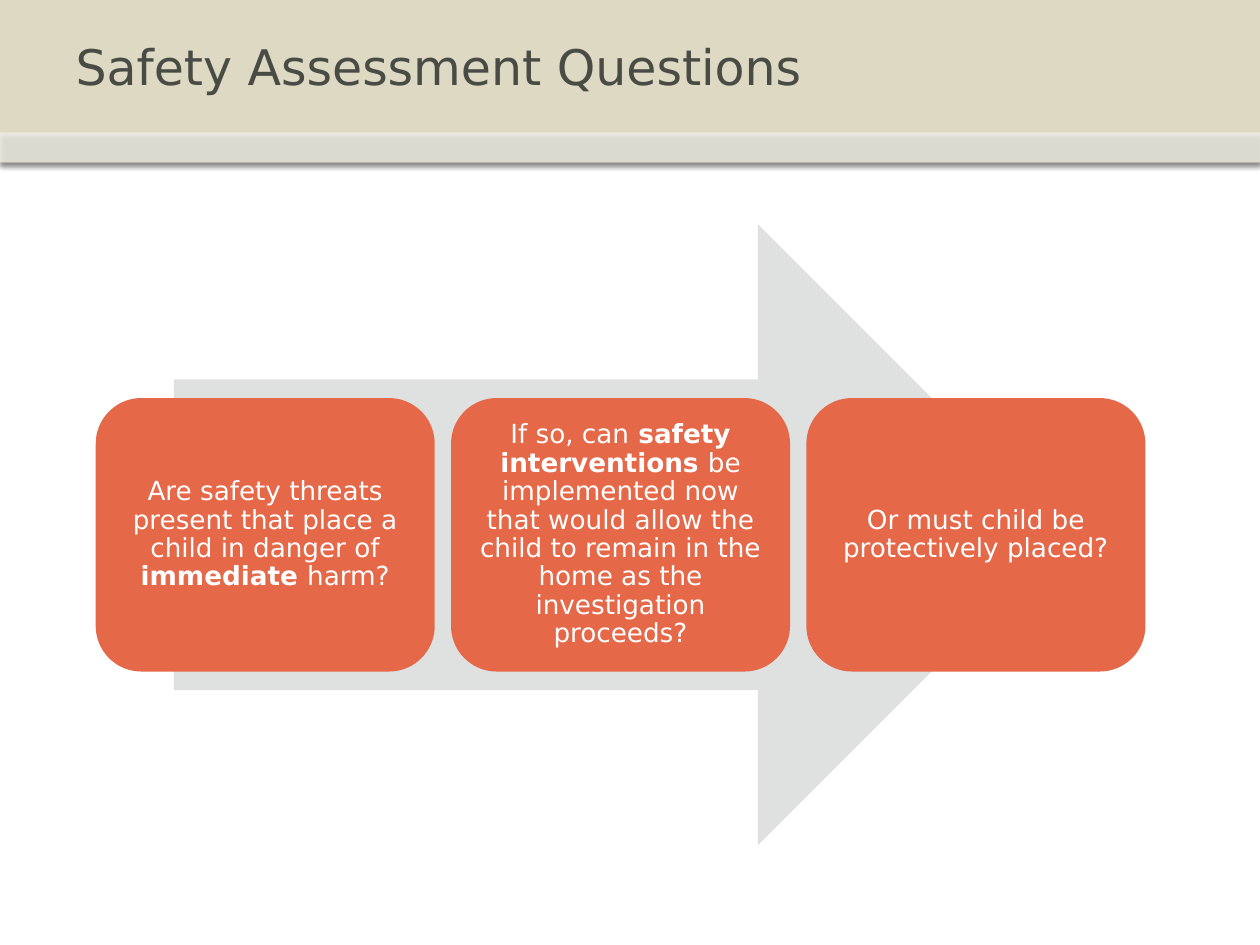
import lxml.etree
import pptx
import pptx.dml.color
import pptx.enum.shapes
import pptx.enum.text
import pptx.oxml.ns
import pptx.util

THEME = {
    "font": "DejaVu Sans",
    "title_size": 28,
    "step_size": 15,
    "title": "484C45",
    "band": "DDD9C3",
    "white": "FFFFFF",
    "arrow": "DEE1DF",
    "step": "E56849",
}
KINDS = pptx.enum.shapes.MSO_SHAPE
MIDDLE = pptx.enum.text.MSO_ANCHOR.MIDDLE
ALIGN = pptx.enum.text.PP_ALIGN

deck = pptx.Presentation()
deck.slide_width = pptx.util.Inches(10)
deck.slide_height = pptx.util.Inches(7.5)
page = deck.slides.add_slide(deck.slide_layouts[5])


def add_block(kind, left, top, width, height, color):
    """Add a shape with a plain fill, no line and no shadow; lengths in inches."""
    block = page.shapes.add_shape(kind, *map(pptx.util.Inches, (left, top, width, height)))
    block.shadow.inherit = False
    block.fill.solid()
    block.fill.fore_color.rgb = pptx.dml.color.RGBColor.from_string(color)
    block.line.fill.background()
    return block


def style_font(para, size, color):
    para.font.name = THEME["font"]
    para.font.size = pptx.util.Pt(size)
    para.font.color.rgb = pptx.dml.color.RGBColor.from_string(color)


# Header: a full band with a translucent strip along its foot
header_height, strip_height = 1.29, 0.24
title_height = header_height - strip_height
header = add_block(KINDS.RECTANGLE, 0, 0, 10, header_height, THEME["band"])
strip = add_block(KINDS.RECTANGLE, 0, title_height, 10, strip_height, THEME["white"])
strip_color = strip._element.spPr.find(pptx.oxml.ns.qn("a:solidFill"))[0]
lxml.etree.SubElement(strip_color, pptx.oxml.ns.qn("a:alpha"), val="53000")
for band in (header, strip):
    effects = band._element.spPr.find(pptx.oxml.ns.qn("a:effectLst"))
    effects.append(lxml.etree.fromstring(
        f'<a:outerShdw {pptx.oxml.ns.nsdecls("a")} blurRad="39370" dist="22860"'
        ' dir="5400000" rotWithShape="0"><a:srgbClr val="000000">'
        '<a:alpha val="35000"/></a:srgbClr></a:outerShdw>'))

title = page.shapes.title
title.left, title.top = pptx.util.Inches(0.5), 0
title.width, title.height = pptx.util.Inches(9), pptx.util.Inches(title_height)
title.text = "Safety Assessment Questions"
title.text_frame.vertical_anchor = MIDDLE
title.text_frame.paragraphs[0].alignment = ALIGN.LEFT
style_font(title.text_frame.paragraphs[0], THEME["title_size"], THEME["title"])
strip._element.addnext(title._element)  # in front of the header band

# Process arrow, with the steps centred on its height
arrow_top, arrow_height = 1.78, 4.93
add_block(KINDS.RIGHT_ARROW, 1.38, arrow_top, 7.1, arrow_height, THEME["arrow"])

# Each step is a list of (text, bold) spans
steps = [
    [("Are safety threats present that place a child in danger of", False),
     (" immediate ", True),
     ("harm?", False)],
    [("If so, can", False),
     (" safety interventions ", True),
     ("be implemented now that would allow the child to remain in the home "
      "as the investigation proceeds?", False)],
    [("Or must child be protectively placed?", False)],
]
step_left, step_width, step_pitch = 0.76, 2.69, 2.82
step_height = 2.17
step_top = arrow_top + (arrow_height - step_height) / 2
for column, spans in enumerate(steps):
    box = add_block(KINDS.ROUNDED_RECTANGLE, step_left + column * step_pitch, step_top,
                    step_width, step_height, THEME["step"])
    frame = box.text_frame
    frame.word_wrap = True
    frame.vertical_anchor = MIDDLE
    frame.margin_left = frame.margin_right = pptx.util.Inches(0.06)
    frame.margin_top = frame.margin_bottom = pptx.util.Inches(0.06)
    para = frame.paragraphs[0]
    para.alignment = ALIGN.CENTER
    para.line_spacing = 0.9
    style_font(para, THEME["step_size"], THEME["white"])
    for text, bold in spans:
        span = para.add_run()
        span.text = text
        span.font.bold = bold

deck.save("out.pptx")
